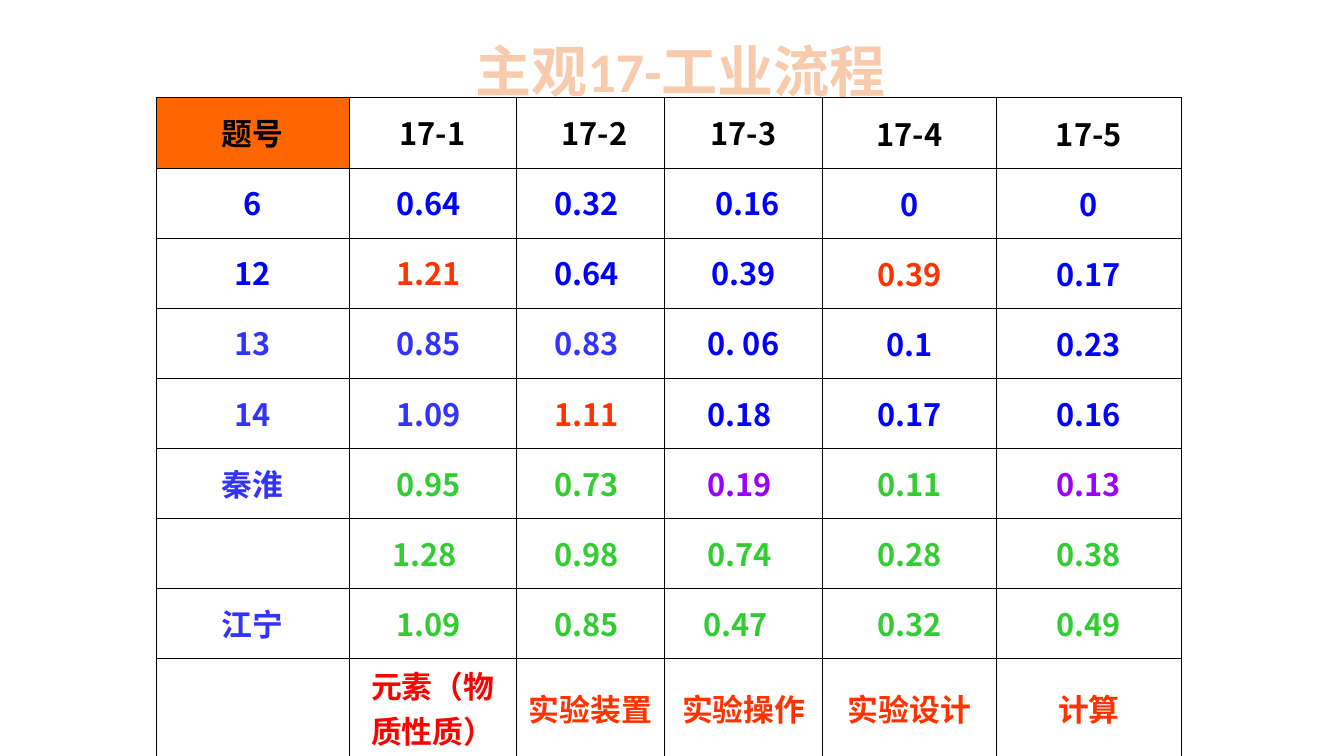
from dataclasses import dataclass
from typing import Any

from lxml import etree
from pptx import Presentation
from pptx.dml.color import RGBColor
from pptx.enum.text import MSO_ANCHOR, MSO_AUTO_SIZE, PP_ALIGN
from pptx.oxml.ns import qn
from pptx.util import Inches, Pt

CENTER = PP_ALIGN.CENTER
MIDDLE = MSO_ANCHOR.MIDDLE
BOTTOM = MSO_ANCHOR.BOTTOM
FIXED_SIZE = MSO_AUTO_SIZE.NONE
TITLE_ONLY = 5


@dataclass(frozen=True)
class Theme:
    latin: str = "Calibri"
    chinese: str = "Noto Sans CJK SC"
    title_size: float = 40
    cell_size: float = 22
    border_width: float = 0.5
    outline_width: float = 1.75
    title: str = "F8CBAD"
    outline: str = "ED7D31"
    header: str = "FF6600"
    black: str = "000000"
    blue: str = "0000FF"
    violet: str = "3333FF"
    orange: str = "FF3300"
    green: str = "33CC33"
    purple: str = "9900FF"
    red: str = "FF0000"


@dataclass(frozen=True)
class Score:
    text: str
    color: str
    shift: float = 0


THEME = Theme()
BLACK, BLUE, VIOLET = THEME.black, THEME.blue, THEME.violet
ORANGE, GREEN, PURPLE = THEME.orange, THEME.green, THEME.purple
NUDGE = 0.08
COLUMN_WIDTHS = (1.91, 1.66, 1.47, 1.57, 1.72, 1.84)
ROW_HEIGHTS = (0.7, 0.69)
TIGHT_ROWS = 4
TIGHT_COLUMNS = 4

ROWS: list[list[Score]] = [
    [Score("题号", BLACK), Score("17-1", BLACK), Score("17-2", BLACK, -NUDGE),
     Score("17-3", BLACK), Score("17-4", BLACK), Score("17-5", BLACK)],
    [Score("6", BLUE), Score("0.64", BLUE, NUDGE), Score("0.32", BLUE, NUDGE),
     Score("0.16", BLUE, -NUDGE), Score("0", BLUE), Score("0", BLUE)],
    [Score("12", BLUE), Score("1.21", ORANGE, NUDGE), Score("0.64", BLUE, NUDGE),
     Score("0.39", BLUE), Score("0.39", ORANGE), Score("0.17", BLUE)],
    [Score("13", VIOLET), Score("0.85", VIOLET, NUDGE), Score("0.83", VIOLET, NUDGE),
     Score("0. 06", BLUE), Score("0.1", BLUE), Score("0.23", BLUE)],
    [Score("14", VIOLET), Score("1.09", VIOLET, NUDGE), Score("1.11", ORANGE, NUDGE),
     Score("0.18", BLUE, NUDGE), Score("0.17", BLUE), Score("0.16", BLUE)],
    [Score("秦淮", VIOLET), Score("0.95", GREEN, NUDGE), Score("0.73", GREEN, NUDGE),
     Score("0.19", PURPLE, NUDGE), Score("0.11", GREEN), Score("0.13", PURPLE)],
    [Score("", VIOLET), Score("1.28", GREEN, 2 * NUDGE), Score("0.98", GREEN, NUDGE),
     Score("0.74", GREEN, NUDGE), Score("0.28", GREEN), Score("0.38", GREEN)],
    [Score("江宁", VIOLET), Score("1.09", GREEN, NUDGE), Score("0.85", GREEN, NUDGE),
     Score("0.47", GREEN, 2 * NUDGE), Score("0.32", GREEN), Score("0.49", GREEN)],
    [Score("", VIOLET), Score("元素（物质性质）", THEME.red), Score("实验装置", ORANGE),
     Score("实验操作", ORANGE), Score("实验设计", ORANGE), Score("计算", ORANGE)],
]


def add_span(para: Any, text: str, size: float, color: str, latin: str) -> Any:
    span = para.add_run()
    span.text = text
    span.font.size = Pt(size)
    span.font.bold = True
    span.font.name = latin
    span.font.color.rgb = RGBColor.from_string(color)
    properties = span._r.get_or_add_rPr()
    east_asian = etree.Element(qn("a:ea"), typeface=THEME.chinese)
    properties.find(qn("a:latin")).addnext(east_asian)
    return span


def make_line(tag: str, width: float, color: str) -> Any:
    line = etree.Element(qn(tag), w=str(Pt(width)))
    fill = etree.SubElement(line, qn("a:solidFill"))
    etree.SubElement(fill, qn("a:srgbClr"), val=color)
    return line


def draw_title(page: Any) -> None:
    title = page.shapes.title
    title.left, title.top = Inches(4.26), Inches(-0.23)
    title.width, title.height = Inches(5.22), Inches(1.31)
    frame = title.text_frame
    frame.word_wrap = True
    frame.auto_size = FIXED_SIZE
    frame.vertical_anchor = BOTTOM
    frame.margin_right = Inches(0.34)
    para = frame.paragraphs[0]
    para.alignment = CENTER
    span = add_span(para, "主观17-工业流程", THEME.title_size, THEME.title, THEME.latin)
    outline = make_line("a:ln", THEME.outline_width, THEME.outline)
    span._r.get_or_add_rPr().insert(0, outline)


def draw_cell(cell: Any, score: Score, tight: bool, header: bool) -> None:
    cell.vertical_anchor = MIDDLE
    cell.margin_left = Inches(0.1 + max(-score.shift, 0))
    cell.margin_right = Inches(0.1 + max(score.shift, 0))
    properties = cell._tc.get_or_add_tcPr()
    for tag in ("a:lnL", "a:lnR", "a:lnT", "a:lnB"):
        properties.append(make_line(tag, THEME.border_width, BLACK))
    if header:
        cell.fill.solid()
        cell.fill.fore_color.rgb = RGBColor.from_string(THEME.header)
    else:
        cell.fill.background()
    if not score.text:
        return
    para = cell.text_frame.paragraphs[0]
    para.alignment = CENTER
    if tight:
        para.line_spacing = 0.9
        para.space_before = Pt(10)
    latin = THEME.latin if header else THEME.chinese
    add_span(para, score.text, THEME.cell_size, score.color, latin)


def draw_table(page: Any) -> None:
    heights = [ROW_HEIGHTS[index % 2] for index in range(len(ROWS))]
    table = page.shapes.add_table(
        len(ROWS), len(COLUMN_WIDTHS), Inches(1.55), Inches(0.97),
        Inches(sum(COLUMN_WIDTHS)), Inches(sum(heights))).table
    table.first_row = False
    table.horz_banding = False
    for column, width in zip(table.columns, COLUMN_WIDTHS):
        column.width = Inches(width)
    for row, height in zip(table.rows, heights):
        row.height = Inches(height)
    for row_index, scores in enumerate(ROWS):
        for column_index, score in enumerate(scores):
            tight = row_index < TIGHT_ROWS and column_index < TIGHT_COLUMNS
            header = row_index == 0 and column_index == 0
            draw_cell(table.cell(row_index, column_index), score, tight, header)


def main() -> None:
    deck = Presentation()
    deck.slide_width, deck.slide_height = Inches(13.33), Inches(7.5)
    page = deck.slides.add_slide(deck.slide_layouts[TITLE_ONLY])
    draw_title(page)
    draw_table(page)
    deck.save("out.pptx")


if __name__ == "__main__":
    main()
